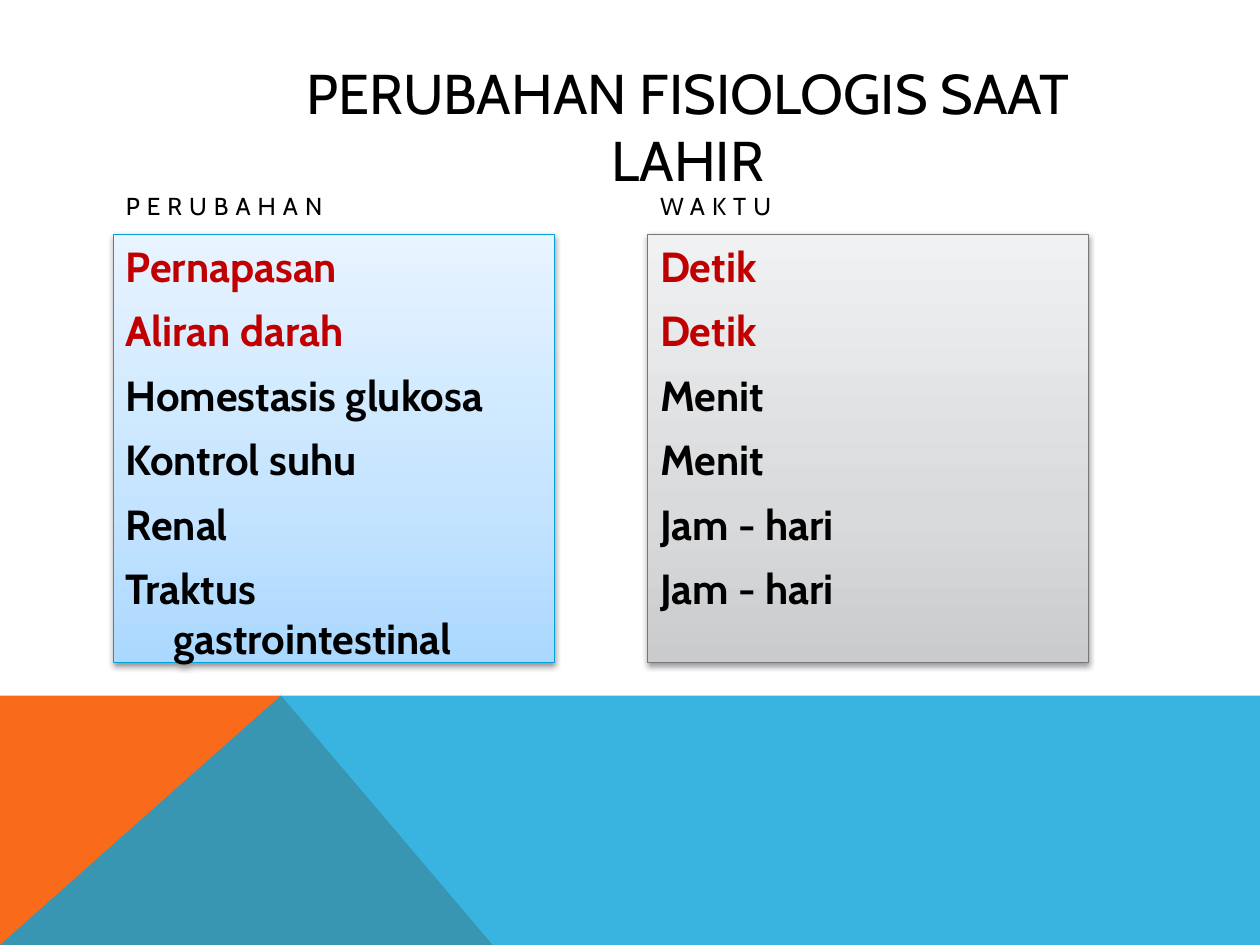
from copy import deepcopy
from dataclasses import dataclass

from lxml.etree import SubElement
from pptx import Presentation
from pptx.dml.color import RGBColor
from pptx.enum.shapes import MSO_SHAPE
from pptx.enum.text import MSO_ANCHOR, PP_ALIGN
from pptx.oxml.ns import qn
from pptx.util import Inches, Pt


@dataclass(frozen=True)
class Theme:
    font: str = "Cabin"
    title_size: int = 32
    header_size: int = 14
    item_size: int = 24
    text: str = "000000"
    urgent: str = "C00000"
    orange: str = "F96A1B"
    blue: str = "08A1D9"
    blue_panel: tuple = ("ABD8FF", "C3E3FF", "E8F4FF")
    blue_border: str = "03A0D9"
    gray_panel: tuple = ("C9CBCD", "D9DADC", "F0F1F2")
    gray_border: str = "76787B"


THEME = Theme()
URGENT_ROWS = 2
CHANGES = ["Pernapasan", "Aliran darah", "Homestasis glukosa", "Kontrol suhu",
           "Renal", "Traktus gastrointestinal"]
TIMES = ["Detik", "Detik", "Menit", "Menit", "Jam - hari", "Jam - hari"]


def rgb(color):
    return RGBColor.from_string(color)


def style(paragraph, size, color=THEME.text, bold=False):
    font = paragraph.font
    font.name, font.size, font.bold = THEME.font, Pt(size), bold
    font.color.rgb = rgb(color)


def add_text(slide, box, text, size, anchor):
    frame = slide.shapes.add_textbox(*map(Inches, box)).text_frame
    frame.word_wrap = True
    frame.vertical_anchor = anchor
    paragraph = frame.paragraphs[0]
    paragraph.text = text
    style(paragraph, size)
    return frame


def add_polygon(slide, points, color, opacity=100):
    builder = slide.shapes.build_freeform(*map(Inches, points[0]), scale=1.0)
    builder.add_line_segments([(Inches(x), Inches(y)) for x, y in points[1:]])
    polygon = builder.convert_to_shape()
    polygon.shadow.inherit = False
    polygon.fill.solid()
    polygon.fill.fore_color.rgb = rgb(color)
    polygon.line.fill.background()
    if opacity < 100:
        color_node = polygon._element.spPr.find(qn("a:solidFill"))[0]
        SubElement(color_node, qn("a:alpha"), val=str(opacity * 1000))


def add_footer(slide, left, top, width, height):
    """Orange triangle under a translucent blue band that share one peak."""
    right, bottom = left + width, top + height
    peak = (left + 2.23, top)
    add_polygon(slide, [(left, bottom), (left, top), peak, (left + 3.91, bottom)],
                THEME.orange)
    add_polygon(slide, [(left, bottom), peak, (right, top), (right, bottom)],
                THEME.blue, opacity=80)


def add_title(slide, left, top, width, height):
    frame = add_text(slide, (left, top, width, height), "PERUBAHAN FISIOLOGIS SAAT LAHIR",
                     THEME.title_size, MSO_ANCHOR.BOTTOM)
    frame.margin_bottom = Inches(0.33)
    frame.paragraphs[0].alignment = PP_ALIGN.CENTER


def fill_gradient(shape, colors):
    """Three stops that run from the bottom edge to the top."""
    shape.fill.gradient()
    shape.fill.gradient_angle = 90
    stop_list = shape._element.spPr.find(qn("a:gradFill")).find(qn("a:gsLst"))
    stop_list.insert(1, deepcopy(stop_list[0]))
    for stop, position, color in zip(shape.fill.gradient_stops, (0, 0.35, 1), colors):
        stop.position = position
        stop.color.rgb = rgb(color)


def add_soft_shadow(shape):
    shape.shadow.inherit = False
    effects = shape._element.spPr.find(qn("a:effectLst"))
    shadow = SubElement(effects, qn("a:outerShdw"), blurRad=str(Pt(3.1)),
                        dist=str(Pt(1.6)), dir="5400000", rotWithShape="0")
    color = SubElement(shadow, qn("a:srgbClr"), val="000000")
    SubElement(color, qn("a:alpha"), val="38000")


def add_column(slide, left, top, width, height, header, items, colors, border, hanging=0):
    """Spaced header over a shaded panel of items."""
    header_height, panel_offset = 0.6, 0.66
    heading = add_text(slide, (left, top, width, header_height), header,
                       THEME.header_size, MSO_ANCHOR.BOTTOM)
    heading.paragraphs[0].runs[0].font._element.set("spc", "400")

    panel = slide.shapes.add_shape(
        MSO_SHAPE.RECTANGLE, Inches(left), Inches(top + panel_offset),
        Inches(width), Inches(height - panel_offset))
    fill_gradient(panel, colors)
    panel.line.color.rgb = rgb(border)
    panel.line.width = Pt(0.75)
    add_soft_shadow(panel)

    frame = panel.text_frame
    frame.word_wrap = True
    frame.vertical_anchor = MSO_ANCHOR.TOP
    for row, item in enumerate(items):
        paragraph = frame.add_paragraph() if row else frame.paragraphs[0]
        paragraph.text = item
        paragraph.alignment = PP_ALIGN.LEFT
        paragraph.space_before = Pt(8)
        style(paragraph, THEME.item_size,
              THEME.urgent if row < URGENT_ROWS else THEME.text, bold=True)
        if hanging:
            properties = paragraph._p.get_or_add_pPr()
            properties.set("marL", str(Inches(hanging)))
            properties.set("indent", str(-Inches(hanging)))


def main():
    presentation = Presentation()
    presentation.slide_width, presentation.slide_height = Inches(10), Inches(7.5)
    slide = presentation.slides.add_slide(presentation.slide_layouts[6])
    add_footer(slide, 0, 5.52, 10, 1.98)
    add_title(slide, 1.79, 0.67, 7.34, 1.19)
    add_column(slide, 0.9, 1.2, 3.5, 4.06, "PERUBAHAN", CHANGES,
               THEME.blue_panel, THEME.blue_border, hanging=0.38)
    add_column(slide, 5.14, 1.2, 3.5, 4.06, "WAKTU", TIMES,
               THEME.gray_panel, THEME.gray_border)
    presentation.save("out.pptx")


if __name__ == "__main__":
    main()
